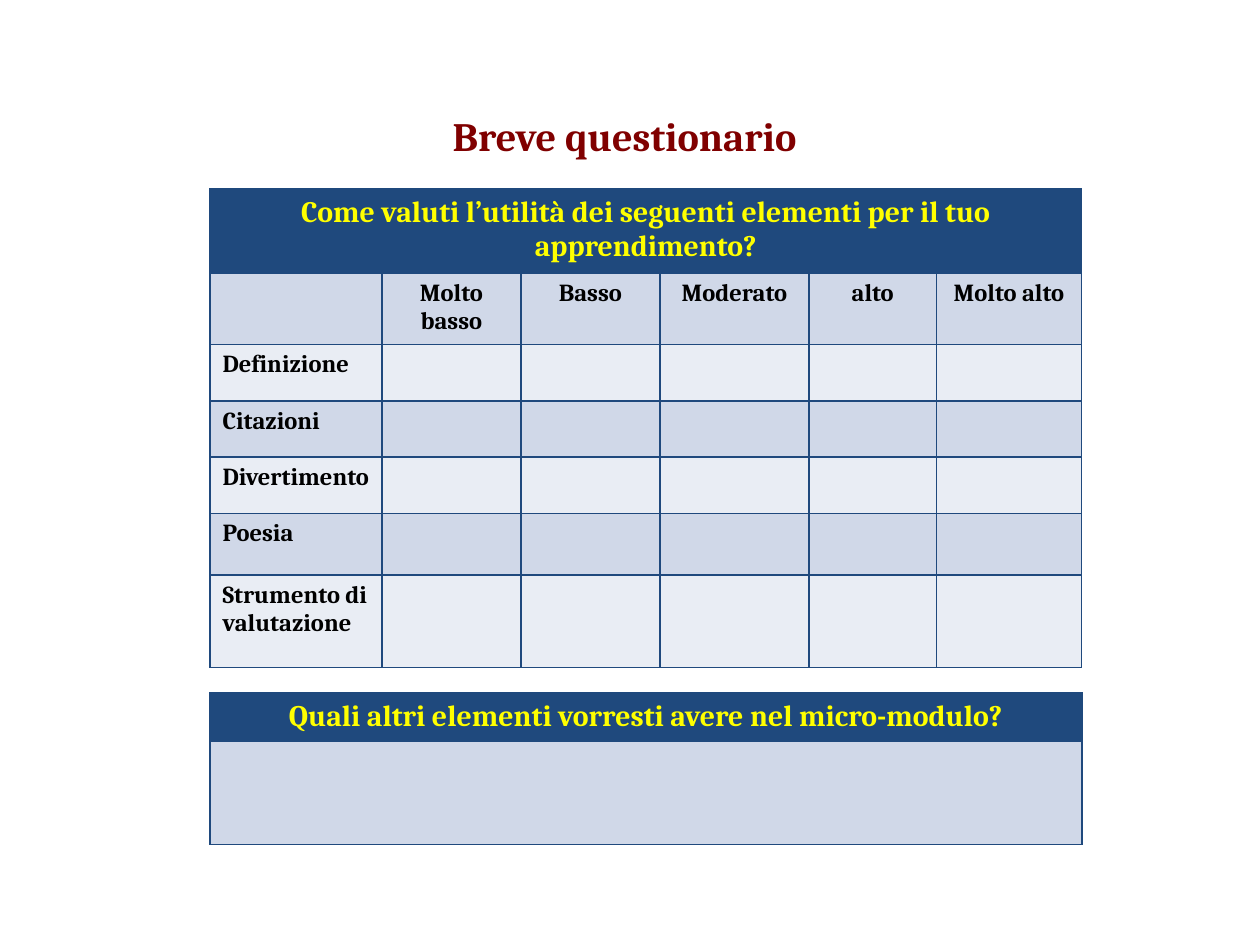
from lxml import etree
from pptx import Presentation
from pptx.dml.color import RGBColor
from pptx.enum import text
from pptx.oxml.ns import qn
from pptx.util import Pt

NAVY, YELLOW, BLACK, MAROON = "1F497D", "FFFF00", "000000", "800000"
BANDS = ["D0D8E8", "E9EDF4"]
HEADER = {"size": Pt(17), "bold": True, "name": "Cambria"}
LABEL = {**HEADER, "size": Pt(14)}
TITLE = {**HEADER, "size": Pt(23)}
LEFT, WIDTH = 120, 498.2


def write(tf, words, fmt, colour, centred=True):
    p = tf.paragraphs[0]
    p.alignment = text.PP_ALIGN.CENTER if centred else text.PP_ALIGN.LEFT
    r = p.add_run()
    r.text = words
    for key, value in fmt.items():
        setattr(r.font, key, value)
    r.font.color.rgb = RGBColor.from_string(colour)


def add_grid(s, top, cols, rows, heading):
    """Banded table with a merged heading row and thin navy borders."""
    frame = s.shapes.add_table(len(rows), len(cols), Pt(LEFT), Pt(top), Pt(WIDTH), Pt(sum(rows)))
    table = frame.table
    for col, width in zip(table.columns, cols):
        col.width = Pt(width)
    for i, (row, height) in enumerate(zip(table.rows, rows)):
        row.height = Pt(height)
        for cell in row.cells:
            tcPr = cell._tc.get_or_add_tcPr()
            for side in ("a:lnL", "a:lnR", "a:lnT", "a:lnB"):
                ln = etree.SubElement(tcPr, qn(side), w=str(Pt(1)))
                fill = etree.SubElement(ln, qn("a:solidFill"))
                etree.SubElement(fill, qn("a:srgbClr"), val=NAVY)
            cell.fill.solid()
            cell.fill.fore_color.rgb = RGBColor.from_string(BANDS[(i - 1) % 2] if i else NAVY)
    if len(cols) > 1:
        table.cell(0, 0).merge(table.cell(0, len(cols) - 1))
    write(table.cell(0, 0).text_frame, heading, HEADER, YELLOW)
    return table


prs = Presentation()
prs.slide_width, prs.slide_height = Pt(720), Pt(540)
s = prs.slides.add_slide(prs.slide_layouts[6])

# Title
tf = s.shapes.add_textbox(Pt(168), Pt(60), Pt(378), Pt(45)).text_frame
tf.word_wrap = True
write(tf, "Breve questionario", TITLE, MAROON)

# Rating table
ratings = ["Molto basso", "Basso", "Moderato", "alto", "Molto alto"]
elements = ["Definizione", "Citazioni", "Divertimento", "Poesia", "Strumento di valutazione"]
table = add_grid(s, 108, [98.3, 79.4, 79.4, 85.3, 72.7, 83.1],
                 [37.4, 32.2, 32.2, 32.2, 32.2, 35.3, 52.6],
                 "Come valuti l’utilità dei seguenti elementi per il tuo apprendimento?")
for c, rating in enumerate(ratings, 1):
    write(table.cell(1, c).text_frame, rating, LABEL, BLACK)
for r, element in enumerate(elements, 2):
    write(table.cell(r, 0).text_frame, element, LABEL, BLACK, centred=False)

# Open question
add_grid(s, 396, [WIDTH], [27.5, 59],
         "Quali altri elementi vorresti avere nel micro-modulo?")

prs.save("out.pptx")
